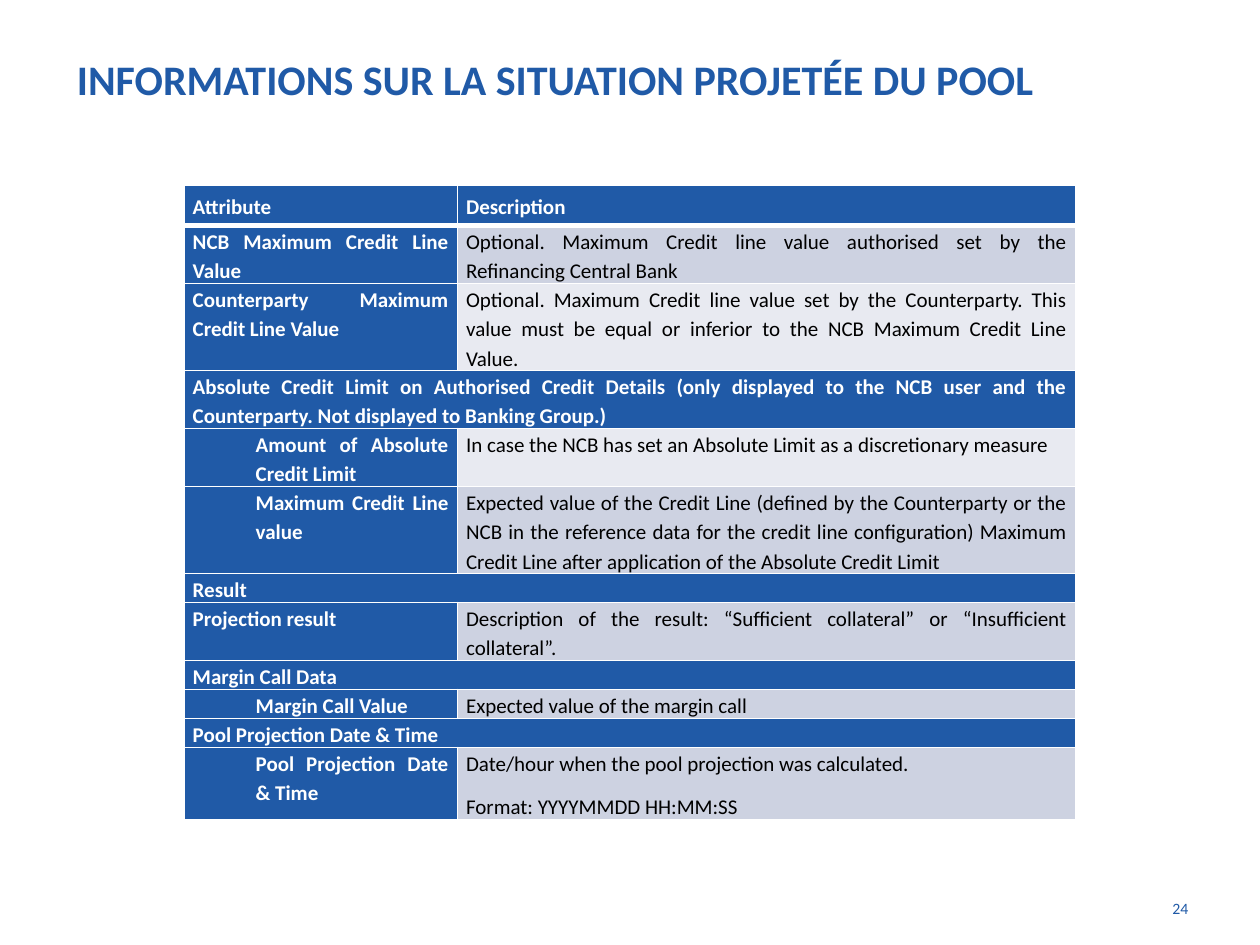
from dataclasses import dataclass
from lxml import etree
from pptx import Presentation
from pptx.dml.color import RGBColor
from pptx.enum.text import MSO_ANCHOR, PP_ALIGN
from pptx.oxml.ns import qn
from pptx.util import Inches, Pt

LEFT, RIGHT, JUST = PP_ALIGN.LEFT, PP_ALIGN.RIGHT, PP_ALIGN.JUSTIFY
MIDDLE, TOP = MSO_ANCHOR.MIDDLE, MSO_ANCHOR.TOP


@dataclass(frozen=True)
class Theme:
    face: str = "Calibri"
    blue: str = "205AA7"
    white: str = "FFFFFF"
    black: str = "000000"
    bands: tuple = ("E8EAF1", "CDD2E1")
    head: int = 24
    body: int = 12
    foot: int = 9


THEME = Theme()
WIDE, HIGH = 10, 7.5
COLS = (2.17, 4.91)
LINE = 0.21
PAD = 0.07
INDENT = 0.5

# Each row: name, description, indent level, height in inches.
ROWS = [
    ("Attribute", "Description", 0, 0.32),
    ("NCB Maximum Credit Line Value",
     "Optional. Maximum Credit line value authorised set by the Refinancing Central Bank",
     0, 0.43),
    ("Counterparty Maximum Credit Line Value",
     "Optional. Maximum Credit line value set by the Counterparty. This value must be "
     "equal or inferior to the NCB Maximum Credit Line Value.", 0, 0.43),
    ("Absolute Credit Limit on Authorised Credit Details (only displayed to the NCB user "
     "and the Counterparty. Not displayed to Banking Group.) ", None, 0, 0.43),
    ("Amount of Absolute Credit Limit",
     "In case the NCB has set an Absolute Limit as a discretionary measure", 1, 0.43),
    ("Maximum Credit Line value",
     "Expected value of the Credit Line (defined by the Counterparty or the NCB in the "
     "reference data for the credit line configuration) Maximum Credit Line after "
     "application of the Absolute Credit Limit", 1, 0.65),
    ("Result", None, 0, LINE),
    ("Projection result",
     "Description of the result: “Sufficient collateral” or “Insufficient collateral”.",
     0, LINE),
    ("Margin Call Data", None, 0, LINE),
    ("Margin Call Value", "Expected value of the margin call", 1, LINE),
    ("Pool Projection Date & Time", None, 0, LINE),
    ("Pool Projection Date & Time",
     "Date/hour when the pool projection was calculated.\nFormat: YYYYMMDD HH:MM:SS",
     1, 0.55),
]


def place(shape, left, top, width, height):
    shape.left, shape.top = Inches(left * WIDE), Inches(top * HIGH)
    shape.width, shape.height = Inches(width * WIDE), Inches(height * HIGH)


def style(frame, size, tint, bold, align):
    for para in frame.paragraphs:
        para.alignment = align
        for run in para.runs:
            font = run.font
            font.name, font.size, font.bold = THEME.face, Pt(size), bold
            font.color.rgb = RGBColor.from_string(tint)


def add_title(slide, text):
    title = slide.shapes.title
    place(title, 0.051, 0, 0.9, 1 / 6)
    frame = title.text_frame
    frame.text = text
    frame.vertical_anchor = MIDDLE
    style(frame, THEME.head, THEME.blue, True, LEFT)


def add_number(slide, text):
    box = slide.shapes.add_textbox(0, 0, 0, 0)
    place(box, 0.894, 0.945, 0.059, 0.052)
    frame = box.text_frame
    frame.word_wrap = True
    frame.text = text
    style(frame, THEME.foot, THEME.blue, False, RIGHT)


def edge(cell, top, base):
    props = cell._tc.get_or_add_tcPr()
    sides = (("L", 1), ("R", 1), ("T", top), ("B", base))
    for spot, (side, width) in enumerate(sides):
        line = etree.Element(qn(f"a:ln{side}"), w=str(Pt(width)))
        fill = etree.SubElement(line, qn("a:solidFill"))
        etree.SubElement(fill, qn("a:srgbClr"), val=THEME.white)
        props.insert(spot, line)


def fill_cell(cell, text, row, dark, level=0):
    first = row == 0
    cell.fill.solid()
    tint = THEME.blue if dark else THEME.bands[row % 2]
    cell.fill.fore_color.rgb = RGBColor.from_string(tint)
    cell.margin_left = cell.margin_right = Inches(PAD)
    cell.margin_top = cell.margin_bottom = 0
    cell.vertical_anchor = MIDDLE if first else TOP
    frame = cell.text_frame
    frame.text = text
    ink = THEME.white if dark else THEME.black
    style(frame, THEME.body, ink, dark, LEFT if first else JUST)
    for para in frame.paragraphs:
        para.line_spacing, para.space_after = 1.15, Pt(8)
        if level:
            props = para._p.get_or_add_pPr()
            props.set("marL", str(Inches(INDENT * level)))
            props.set("indent", "0")
    edge(cell, 3 if row == 1 else 1, 3 if first else 1)


def add_grid(slide):
    shape = slide.shapes.add_table(len(ROWS), len(COLS), 0, 0, 0, 0)
    place(shape, 0.146, 0.196, sum(COLS) / WIDE, sum(row[-1] for row in ROWS) / HIGH)
    table = shape.table
    for col, width in zip(table.columns, COLS):
        col.width = Inches(width)
    for row, (name, text, level, height) in enumerate(ROWS):
        table.rows[row].height = Inches(height)
        left, right = table.cell(row, 0), table.cell(row, 1)
        fill_cell(left, name, row, True, level)
        fill_cell(right, text or "", row, row == 0 or text is None)
        if text is None:
            left.merge(right)


def main():
    deck = Presentation()
    deck.slide_width, deck.slide_height = Inches(WIDE), Inches(HIGH)
    slide = deck.slides.add_slide(deck.slide_layouts[5])
    add_title(slide, "INFORMATIONS SUR LA SITUATION PROJETÉE DU POOL")
    add_number(slide, "24")
    add_grid(slide)
    deck.save("out.pptx")


if __name__ == "__main__":
    main()
